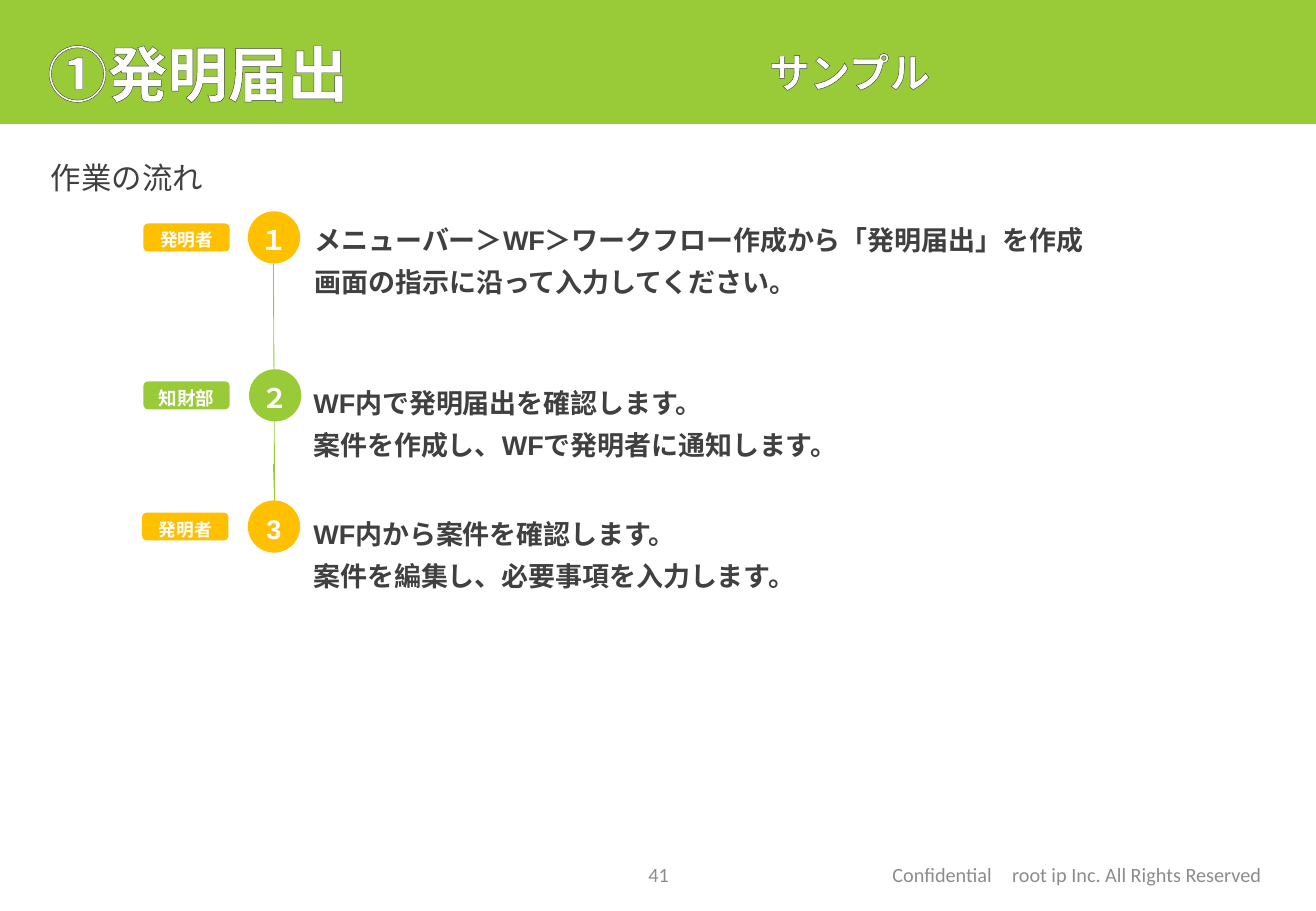
from dataclasses import dataclass

from lxml import etree
from pptx import Presentation
from pptx import util as u
from pptx.dml import color
from pptx.enum import shapes, text
from pptx.oxml import ns


@dataclass(frozen=True)
class Theme:
    green: str = "99CB38"
    amber: str = "FFC000"
    dark: str = "404040"
    gray: str = "8C8C8C"
    white: str = "FFFFFF"
    heading: str = "Calibri"
    body: str = "Arial"
    title_size: float = 35.7
    sample_size: float = 24
    lead_size: float = 18
    step_size: float = 16
    footer_size: float = 12


theme = Theme()
align = text.PP_ALIGN
middle = text.MSO_ANCHOR.MIDDLE


def place(box, left, top, width, height, fill=None):
    box.left, box.top = u.Inches(left), u.Inches(top)
    box.width, box.height = u.Inches(width), u.Inches(height)
    if fill:
        box.shadow.inherit = False
        box.fill.solid()
        box.fill.fore_color.rgb = color.RGBColor.from_string(fill)
        box.line.fill.background()
    return box


def write(box, lines, size, ink, font=theme.body, bold=False, outline=False,
          alignment=align.LEFT, spacing=1.0, anchor=text.MSO_ANCHOR.TOP,
          left=0, top=0, fit=text.MSO_AUTO_SIZE.NONE):
    frame = box.text_frame
    frame.word_wrap = True
    frame.auto_size = fit
    frame.vertical_anchor = anchor
    frame.margin_left, frame.margin_top = u.Inches(left), u.Inches(top)
    frame.margin_right = frame.margin_bottom = 0
    for index, line in enumerate(lines):
        para = frame.add_paragraph() if index else frame.paragraphs[0]
        para.alignment = alignment
        para.line_spacing = spacing
        para.space_before = u.Pt(0)
        span = para.add_run()
        span.text = line
        span.font.size = u.Pt(size)
        span.font.name = font
        span.font.bold = bold
        span.font.color.rgb = color.RGBColor.from_string(ink)
        if outline:
            edge = etree.Element(ns.qn("a:ln"), w=str(u.Pt(0.75)))
            paint = etree.SubElement(edge, ns.qn("a:solidFill"))
            etree.SubElement(paint, ns.qn("a:srgbClr"), val=theme.dark)
            span.font._element.insert(0, edge)


deck = Presentation()
deck.slide_width, deck.slide_height = u.Inches(10.83), u.Inches(7.5)
page = deck.slides.add_slide(deck.slide_layouts[5])
items = page.shapes

title = place(items.title, 0, 0, 10.83, 1.02, theme.green)
write(title, ["①発明届出"], theme.title_size, theme.white, theme.heading, True,
      outline=True, spacing=1.3, anchor=middle, left=0.39)

sample = place(items.add_textbox(0, 0, 0, 0), 6.33, 0.15, 3.95, 0.85)
write(sample, ["サンプル"], theme.sample_size, theme.white, bold=True,
      outline=True, spacing=0.9, anchor=middle, top=0.08)

lead = place(items.add_textbox(0, 0, 0, 0), 0.42, 1.28, 10, 5.4)
write(lead, ["作業の流れ"], theme.lead_size, theme.dark, spacing=1.1)

for start in (2.17, 3.82):
    link = items.add_connector(shapes.MSO_CONNECTOR.STRAIGHT, u.Inches(2.25),
                               u.Inches(start), u.Inches(2.26), u.Inches(4.12))
    link.line.color.rgb = color.RGBColor.from_string(theme.green)
    link.line.width = u.Pt(0.5)
    etree.SubElement(link._element.spPr, ns.qn("a:effectLst"))

steps = [
    ("１", "発明者", 10.5, theme.amber, 2.04, 1.74, 1.18, 2.59, 1.68, 7.91,
     ["メニューバー＞WF＞ワークフロー作成から「発明届出」を作成",
      "画面の指示に沿って入力してください。"]),
    ("２", "知財部", 11, theme.green, 2.05, 3.04, 1.18, 2.58, 3.02, 5.93,
     ["WF内で発明届出を確認します。",
      "案件を作成し、WFで発明者に通知します。"]),
    ("3", "発明者", 10.5, theme.amber, 2.04, 4.12, 1.17, 2.58, 4.1, 5.93,
     ["WF内から案件を確認します。",
      "案件を編集し、必要事項を入力します。"]),
]
for (number, role, role_size, fill, circle_left, circle_top, tag_left,
     text_left, text_top, text_width, lines) in steps:
    circle = items.add_shape(shapes.MSO_SHAPE.OVAL, 0, 0, 0, 0)
    place(circle, circle_left, circle_top, 0.43, 0.43, fill)
    tag = items.add_shape(shapes.MSO_SHAPE.ROUNDED_RECTANGLE, 0, 0, 0, 0)
    place(tag, tag_left, circle_top + 0.1, 0.71, 0.23, fill)
    for box, label, size in ((circle, number, theme.step_size),
                             (tag, role, role_size)):
        write(box, [label], size, theme.white, bold=True,
              alignment=align.CENTER, anchor=middle, top=0.04)
    box = place(items.add_textbox(0, 0, 0, 0),
                text_left, text_top, text_width, 0.76)
    write(box, lines, theme.step_size, theme.dark, bold=True, spacing=1.3,
          top=0.08, fit=text.MSO_AUTO_SIZE.SHAPE_TO_FIT_TEXT)

footers = [
    ("41", 4.2, 2.44, align.CENTER),
    ("Confidential　root ip Inc. All Rights Reserved ", 7.31, 3.11, align.RIGHT),
]
for label, left, width, alignment in footers:
    box = place(items.add_textbox(0, 0, 0, 0), left, 6.93, width, 0.4)
    write(box, [label], theme.footer_size, theme.gray, theme.heading,
          alignment=alignment, spacing=1.3, anchor=middle, top=0.08)

deck.save("out.pptx")
